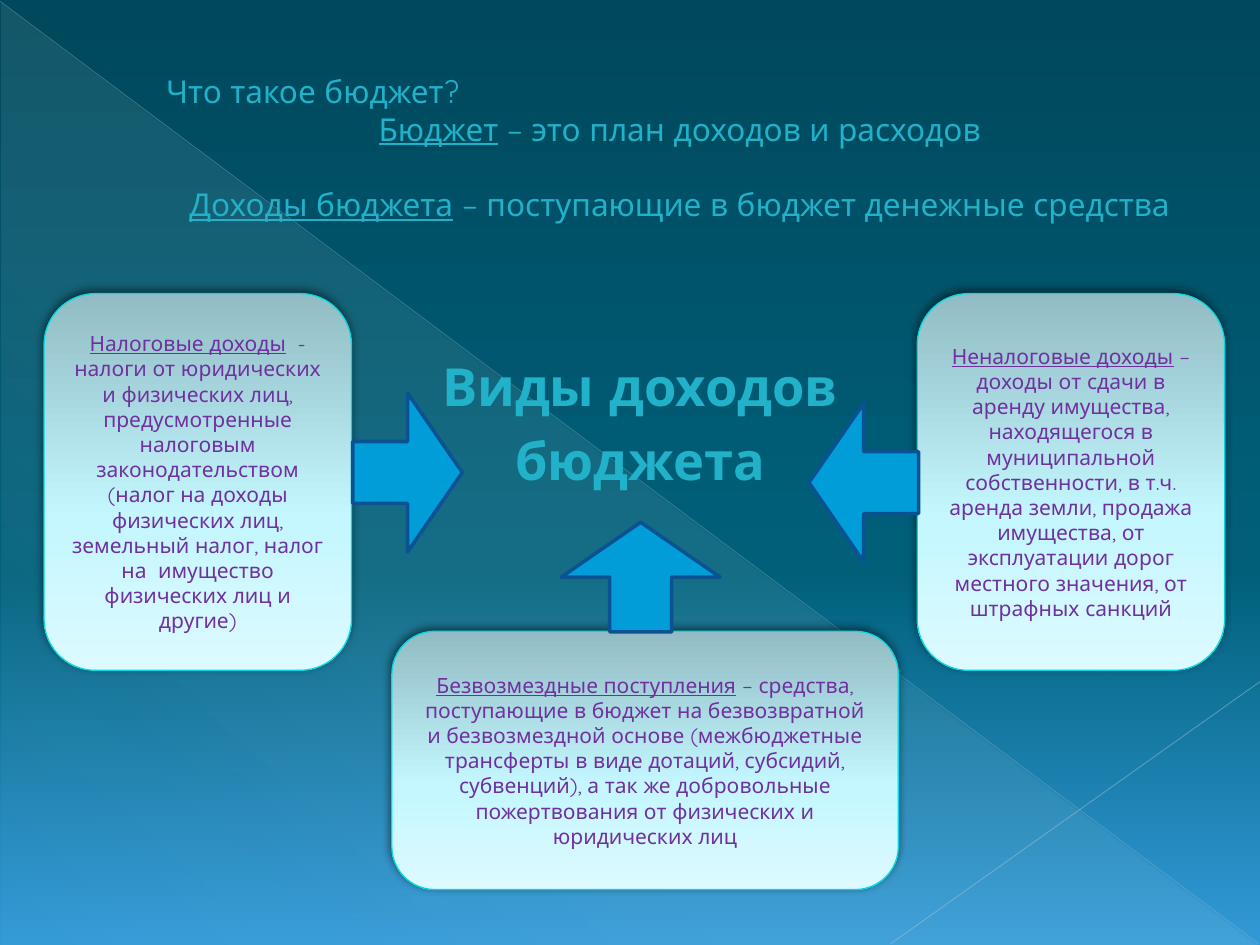
from dataclasses import dataclass

import lxml.etree
import pptx
import pptx.dml.color
import pptx.enum.shapes
import pptx.enum.text
import pptx.oxml.ns
import pptx.util

Inches = pptx.util.Inches
Pt = pptx.util.Pt
SHAPE = pptx.enum.shapes.MSO_SHAPE
ALIGN = pptx.enum.text.PP_ALIGN
ANCHOR = pptx.enum.text.MSO_ANCHOR
qn = pptx.oxml.ns.qn

FONT = "Quicksand"
HUES = {
    "title": "21B2C9", "text": "7030A0", "edge": "00DAE4",
    "arrow": "009DD9", "rim": "0B5292", "shade": "000000",
    "glow": "DBF5F9", "long": "ACC0CE", "short": "B5C7D3",
    "night": "00485C", "sea": "00607A", "sky": "3299D7",
    "dusk": "91BCC3", "ice": "C4F7FF", "pale": "DCFAFF",
}


@dataclass
class Card:
    left: float
    top: float
    width: float
    height: float
    term: str
    rest: str


@dataclass
class Arrow:
    left: float
    top: float
    turn: int


@dataclass
class Ray:
    start: tuple
    end: tuple
    hue: str
    width: float
    alpha: int


CARDS = [
    Card(7.28, 2.33, 2.44, 2.99, "Неналоговые доходы",
         " – доходы от сдачи в аренду имущества, находящегося в "
         "муниципальной собственности, в т.ч. аренда земли, продажа "
         "имущества, от эксплуатации дорог местного значения, от "
         "штрафных санкций"),
    Card(0.35, 2.33, 2.44, 2.99, "Налоговые доходы",
         "  - налоги от юридических и физических лиц, предусмотренные "
         "налоговым законодательством (налог на доходы физических лиц, "
         "земельный налог, налог на  имущество физических лиц и другие)"),
    Card(3.11, 5.01, 4.02, 2.05, "Безвозмездные поступления",
         " – средства, поступающие в бюджет на безвозвратной и "
         "безвозмездной основе (межбюджетные трансферты в виде дотаций, "
         "субсидий, субвенций), а так же добровольные пожертвования от "
         "физических и юридических лиц"),
]
ARROWS = [Arrow(4.65, 3.95, 270), Arrow(2.8, 3.12, 0), Arrow(6.42, 3.2, 180)]
RAYS = [
    Ray((0, 0.01), (9.99, 7.49), "long", 0.39, 35),
    Ray((10, 5.41), (7.07, 7.49), "short", 0.47, 45),
]


def paint(name: str):
    return pptx.dml.color.RGBColor.from_string(HUES[name])


def add_tag(parent, tag: str, **attrs):
    return lxml.etree.SubElement(
        parent, qn(tag), {key: str(value) for key, value in attrs.items()})


def add_hue(parent, name: str, alpha: int = 100) -> None:
    node = add_tag(parent, "a:srgbClr", val=HUES[name])
    if alpha < 100:
        add_tag(node, "a:alpha", val=alpha * 1000)


def set_grad(fill, props, stops: list, angle: int) -> None:
    """Fill with a gradient of (percent, colour, opacity) stops."""
    fill.solid()
    grad = lxml.etree.Element(qn("a:gradFill"), rotWithShape="1")
    group = add_tag(grad, "a:gsLst")
    for pos, name, alpha in stops:
        add_hue(add_tag(group, "a:gs", pos=pos * 1000), name, alpha)
    add_tag(grad, "a:lin", ang=angle * 60000, scaled=0)
    props.replace(props.find(qn("a:solidFill")), grad)


def add_para(frame, runs: list, *, size: float, hue: str, bold: bool = False,
             align=ALIGN.CENTER, before: float = 0) -> None:
    """Write one paragraph from (text, underline) runs."""
    para = frame.paragraphs[0]
    if para.runs:
        para = frame.add_paragraph()
    para.alignment = align
    para.space_before = Pt(before)
    for text, under in runs:
        run = para.add_run()
        run.text = text
        run.font.name = FONT
        run.font.size = Pt(size)
        run.font.bold = bold
        run.font.underline = under
        run.font.color.rgb = paint(hue)


def add_form(slide, kind, left: float, top: float, width: float,
             height: float):
    form = slide.shapes.add_shape(
        kind, Inches(left), Inches(top), Inches(width), Inches(height))
    form.shadow.inherit = False
    return form


def add_box(slide, left: float, top: float, width: float, height: float):
    box = slide.shapes.add_textbox(
        Inches(left), Inches(top), Inches(width), Inches(height))
    box.text_frame.word_wrap = True
    return box.text_frame


def add_ray(slide, ray: Ray) -> None:
    line = slide.shapes.add_connector(
        pptx.enum.shapes.MSO_CONNECTOR.STRAIGHT,
        *(Inches(value) for value in ray.start + ray.end))
    line.line.width = Pt(ray.width)
    line.line.color.rgb = paint(ray.hue)
    props = line._element.spPr
    add_tag(props.find(".//" + qn("a:srgbClr")), "a:alpha",
            val=ray.alpha * 1000)
    add_tag(props, "a:effectLst")


def add_card(slide, card: Card) -> None:
    form = add_form(slide, SHAPE.ROUNDED_RECTANGLE, card.left, card.top,
                    card.width, card.height)
    props = form._element.spPr
    set_grad(form.fill, props, [(0, "dusk", 100), (60, "ice", 100),
                                (100, "pale", 100)], 90)
    form.line.color.rgb = paint("edge")
    form.line.width = Pt(0.75)
    shade = add_tag(props.find(qn("a:effectLst")), "a:outerShdw",
                    blurRad=Pt(5), dist=Pt(2), dir=245 * 60000,
                    rotWithShape=0)
    add_hue(shade, "shade", 50)
    frame = form.text_frame
    frame.word_wrap = True
    frame.vertical_anchor = ANCHOR.MIDDLE
    add_para(frame, [(card.term, True), (card.rest, False)],
             size=12, hue="text")


def add_arrow(slide, arrow: Arrow) -> None:
    form = add_form(slide, SHAPE.RIGHT_ARROW, arrow.left, arrow.top,
                    0.87, 1.26)
    form.adjustments[0] = 0.39
    form.adjustments[1] = 0.5
    form.rotation = arrow.turn
    form.fill.solid()
    form.fill.fore_color.rgb = paint("arrow")
    form.line.color.rgb = paint("rim")
    form.line.width = Pt(2)


def main() -> None:
    deck = pptx.Presentation()
    deck.slide_width, deck.slide_height = Inches(10), Inches(7.5)
    slide = deck.slides.add_slide(deck.slide_layouts[6])

    # Backdrop
    fill = slide.background.fill
    fill.solid()
    set_grad(fill, slide.element.find(".//" + qn("p:bgPr")),
             [(0, "night", 100), (60, "sea", 100), (100, "sky", 100)], 90)
    wedge = add_form(slide, SHAPE.RIGHT_TRIANGLE, 0.01, 0.02, 9.98, 7.48)
    set_grad(wedge.fill, wedge._element.spPr,
             [(0, "glow", 10), (70, "glow", 8), (100, "glow", 1)], 133)
    wedge.line.fill.background()
    for ray in RAYS:
        add_ray(slide, ray)

    # Centre heading
    frame = add_box(slide, 0.28, 2.18, 9.53, 4.72)
    frame.margin_top = Inches(0.63)
    frame.margin_left = Inches(0.17)
    for text, gap in (("Виды доходов", 0), ("бюджета", 6)):
        add_para(frame, [(text, False)], size=30, hue="title", bold=True,
                 before=gap)

    # Definitions
    frame = add_box(slide, 1.22, 0.52, 8.35, 1.31)
    add_para(frame, [("Что такое бюджет?", False)], size=18, hue="title",
             align=ALIGN.LEFT)
    for term, rest, gap in (
            ("Бюджет", " – это план доходов и расходов", 0),
            ("Доходы бюджета", " – поступающие в бюджет денежные средства",
             21.6)):
        add_para(frame, [(term, True), (rest, False)], size=18, hue="title",
                 before=gap)

    # Kinds of income
    for card in CARDS:
        add_card(slide, card)
    for arrow in ARROWS:
        add_arrow(slide, arrow)

    deck.save("out.pptx")


if __name__ == "__main__":
    main()
